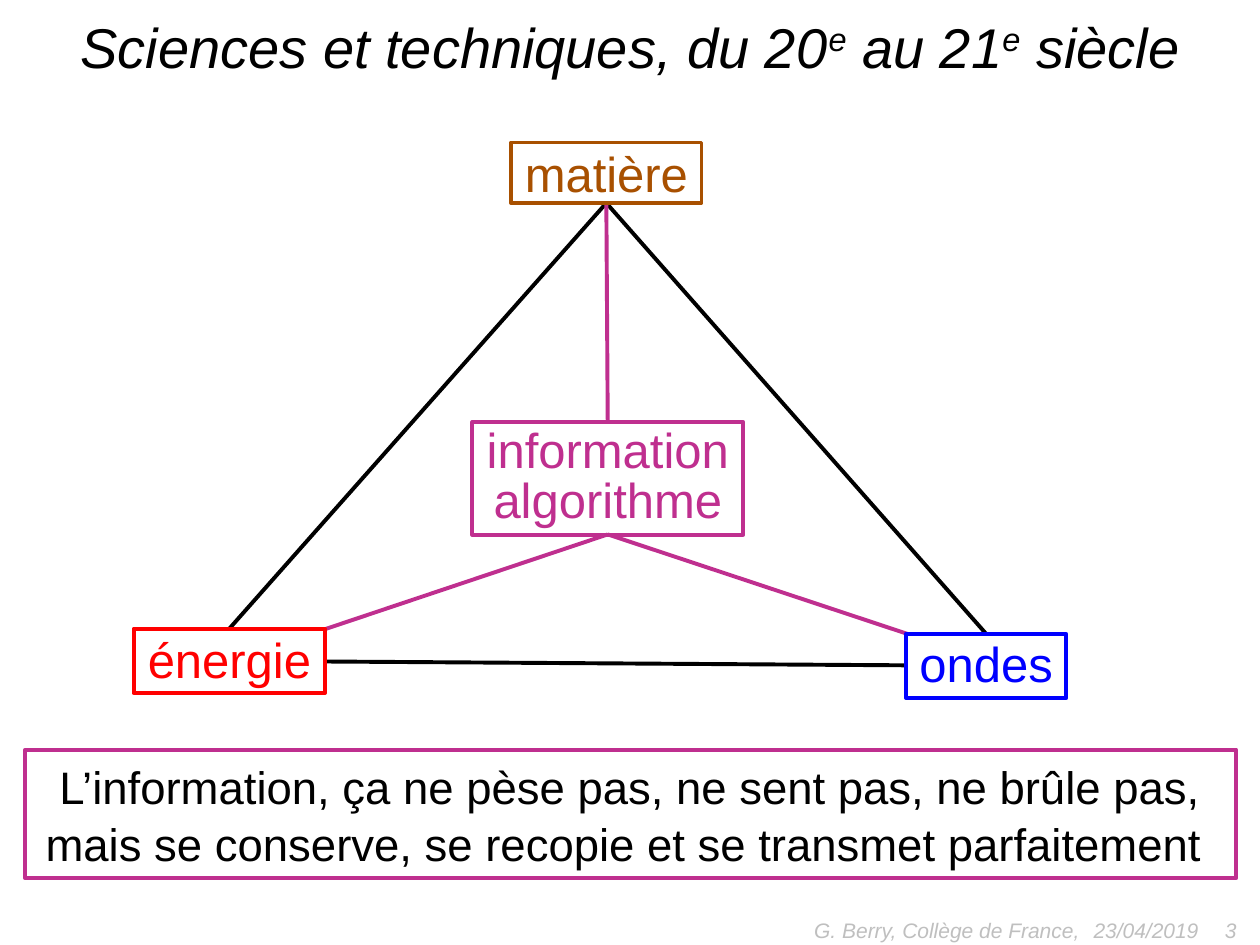
import pptx
import pptx.dml.color
import pptx.enum.shapes
import pptx.enum.text
import pptx.oxml.ns
import pptx.util
from lxml import etree

Pt = pptx.util.Pt
ALIGN = pptx.enum.text.PP_ALIGN
ANCHOR = pptx.enum.text.MSO_ANCHOR
COLORS = {
    "black": "000000", "white": "FFFFFF", "grey": "BFBFBF", "brown": "A85000",
    "purple": "BF2F8F", "red": "FF0000", "blue": "0000FF",
}
RGB = {name: pptx.dml.color.RGBColor.from_string(value) for name, value in COLORS.items()}

deck = pptx.Presentation()
deck.slide_width, deck.slide_height = Pt(720), Pt(540)
slide = deck.slides.add_slide(deck.slide_layouts[6])


def write(shape, lines, size, color, align=ALIGN.CENTER, anchor=ANCHOR.MIDDLE,
          insets=(3.6, 3.6), spacing=1.0, italic=False, wrap=True):
    """Fill a shape with lines, each a list of runs; a run starting with ^ is raised."""
    frame = shape.text_frame
    frame.word_wrap = wrap
    frame.vertical_anchor = anchor
    frame.margin_left = frame.margin_right = Pt(7.2)
    frame.margin_top, frame.margin_bottom = Pt(insets[0]), Pt(insets[1])
    for index, line in enumerate(lines):
        paragraph = frame.add_paragraph() if index else frame.paragraphs[0]
        paragraph.alignment = align
        paragraph.line_spacing = spacing
        for piece in line:
            run = paragraph.add_run()
            run.text = piece.lstrip("^")
            run.font.name = "Arial"
            run.font.size = Pt(size)
            run.font.italic = italic
            run.font.color.rgb = RGB[color]
            if piece.startswith("^"):
                run.font._element.set("baseline", "30000")


def connect(start, end, color):
    link = slide.shapes.add_connector(
        pptx.enum.shapes.MSO_CONNECTOR.STRAIGHT, *[Pt(value) for value in start + end])
    link.line.color.rgb = RGB[color]
    link.line.width = Pt(2.25)
    etree.SubElement(link._element.spPr, pptx.oxml.ns.qn("a:effectLst"))


# Title and footer
title = slide.shapes.add_textbox(Pt(18), Pt(3.6), Pt(684), Pt(85))
write(title, [["Sciences et techniques, du 20", "^e", " au 21", "^e", " siècle"]],
      32, "black", anchor=ANCHOR.TOP, italic=True)
for text, left, width, align in [
    ("23/04/2019", 617.8, 167.8, ALIGN.LEFT),
    ("3", 545.8, 167.8, ALIGN.RIGHT),
    ("G. Berry, Collège de France,", 396, 228.2, ALIGN.RIGHT),
]:
    footer = slide.shapes.add_textbox(Pt(left), Pt(517), Pt(width), Pt(28.8))
    write(footer, [[text]], 12, "grey", align=align, italic=True)

# Links of the triangle, then from its centre
matter_bottom = (346.5, 116)
energy_top, energy_right = (131, 359.3), (185.8, 378)
waves_top, waves_left = (563.5, 362.2), (517.7, 380.2)
info_top, info_bottom = (347.3, 241.2), (347.3, 305.4)
for start, end, color in [
    (energy_top, matter_bottom, "black"),
    (matter_bottom, waves_top, "black"),
    (energy_right, waves_left, "black"),
    (matter_bottom, info_top, "purple"),
    (info_bottom, (175.7, 362.9), "purple"),
    (info_bottom, (522.7, 363.6), "purple"),
]:
    connect(start, end, color)

# Framed texts: lines, box, frame colour, text colour, size, fill, anchor, insets, spacing, wrap
for lines, box, frame_color, color, size, fill, anchor, insets, spacing, wrap in [
    (["matière"], (292.1, 81.4, 108.8, 34.6), "brown", "brown", 28, None,
     ANCHOR.MIDDLE, (0, 1.44), 1.05, False),
    (["information", "algorithme"], (269.9, 241.2, 154.8, 64.4), "purple", "purple", 28, None,
     ANCHOR.MIDDLE, (3.6, 3.6), 0.85, False),
    (["L’information, ça ne pèse pas, ne sent pas, ne brûle pas,",
      "mais se conserve, se recopie et se transmet parfaitement "],
     (14.4, 428.4, 691.9, 73.6), "purple", "black", 26, None,
     ANCHOR.TOP, (3.6, 5.04), 1.05, True),
    (["ondes"], (517.7, 362.2, 91.6, 36.7), "blue", "blue", 28, "white",
     ANCHOR.BOTTOM, (0, 3.6), 1.05, False),
    (["énergie"], (76.3, 359.3, 109.5, 36.7), "red", "red", 28, "white",
     ANCHOR.MIDDLE, (0, 3.6), 1.05, False),
]:
    framed = slide.shapes.add_shape(
        pptx.enum.shapes.MSO_SHAPE.RECTANGLE, *[Pt(value) for value in box])
    framed.shadow.inherit = False
    framed.line.color.rgb = RGB[frame_color]
    framed.line.width = Pt(2.25)
    if fill:
        framed.fill.solid()
        framed.fill.fore_color.rgb = RGB[fill]
    else:
        framed.fill.background()
    write(framed, [[line] for line in lines], size, color,
          anchor=anchor, insets=insets, spacing=spacing, wrap=wrap)

deck.save("out.pptx")
